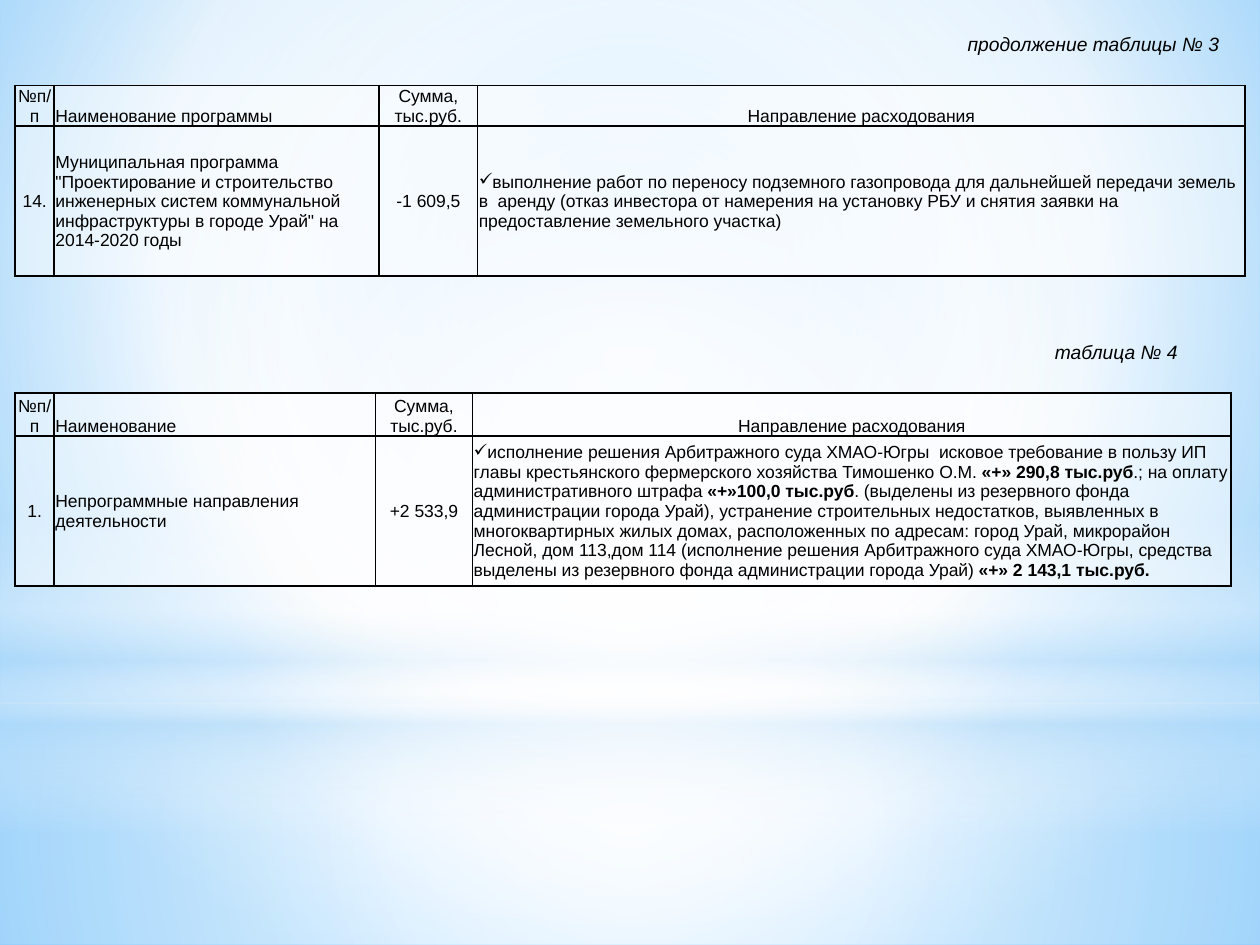
from lxml.etree import SubElement
from pptx import Presentation
from pptx.dml.color import RGBColor
from pptx.enum.shapes import MSO_SHAPE
from pptx.enum.text import MSO_ANCHOR, MSO_AUTO_SIZE, PP_ALIGN
from pptx.oxml import parse_xml
from pptx.oxml.ns import nsdecls, qn
from pptx.util import Inches, Pt

BACKGROUND = [(0, "9ED5FF", 100), (60, "FFFFFF", 100), (100, "5BB9FF", 100)]
CENTER = (50, 50, 50, 50)
GLOWS = [
    (MSO_SHAPE.RECTANGLE, 5.58, 1.92, CENTER,
     [(0, "FFFFFF", 91), (37, "FFFFFF", 76), (100, "B4DCFA", 79)]),
    (MSO_SHAPE.RECTANGLE, 0, 5.58, CENTER,
     [(0, "FFFFFF", 89), (48, "FFFFFF", 62), (100, "B4DCFA", 79)]),
    (MSO_SHAPE.RECTANGLE, 4.12, 2.5, None,
     [(0, "FFFFFF", 0), (29, "FFFFFF", 30), (45, "B4DCFA", 40),
      (55, "FFFFFF", 26), (65, "B4DCFA", 60), (100, "FFFFFF", 0)]),
    (MSO_SHAPE.OVAL, 1.75, 5.58, CENTER, [(0, "FFFFFF", 100), (56, "FFFFFF", 0)]),
]
CAPTIONS = [
    ("продолжение таблицы № 3 ", 7.56, 0.21, 2.26),
    ("таблица № 4 ", 8.26, 2.65, 1.23),
]
TABLES = [
    {
        "top": 0.68,
        "columns": [0.31, 2.58, 0.78, 6.09],
        "rows": [0.32, 1.19],
        "header": ["№п/п", "Наименование программы", "Сумма, тыс.руб.", "Направление расходования"],
        "body": [
            "14.",
            "Муниципальная программа \"Проектирование и строительство инженерных систем "
            "коммунальной инфраструктуры в городе Урай\" на 2014-2020 годы",
            "-1 609,5",
            "выполнение работ по переносу подземного газопровода для дальнейшей передачи земель "
            "в  аренду (отказ инвестора от намерения на установку РБУ и снятия заявки на "
            "предоставление земельного участка)",
        ],
    },
    {
        "top": 3.12,
        "columns": [0.31, 2.55, 0.77, 6.02],
        "rows": [0.34, 1.19],
        "header": ["№п/п", "Наименование", "Сумма, тыс.руб.", "Направление расходования"],
        "body": [
            "1.",
            "Непрограммные направления деятельности",
            "+2 533,9",
            "исполнение решения Арбитражного суда ХМАО-Югры  исковое требование в пользу ИП главы "
            "крестьянского фермерского хозяйства Тимошенко О.М. **«+» 290,8 тыс.руб**.; на оплату "
            "административного штрафа **«+»100,0 тыс.руб**. (выделены из резервного фонда "
            "администрации города Урай), устранение строительных недостатков, выявленных в "
            "многоквартирных жилых домах, расположенных по адресам: город Урай, микрорайон Лесной, "
            "дом 113,дом 114 (исполнение решения Арбитражного суда ХМАО-Югры, средства выделены из "
            "резервного фонда администрации города Урай) **«+» 2 143,1 тыс.руб.**",
        ],
    },
]


def color(code):
    """Turn a hex string into a colour."""
    return RGBColor.from_string(code)


def set_gradient(fill, owner, stops, focus):
    """Give the owner element a radial gradient, or a vertical one without a focus."""
    fill.gradient()
    old = next(owner.iter(qn("a:gradFill")))
    marks = "".join(
        f'<a:gs pos="{place * 1000}"><a:srgbClr val="{code}">'
        f'<a:alpha val="{alpha * 1000}"/></a:srgbClr></a:gs>'
        for place, code, alpha in stops)
    if focus:
        sides = " ".join(f'{side}="{value * 1000}"' for side, value in zip("ltrb", focus))
        course = f'<a:path path="circle"><a:fillToRect {sides}/></a:path>'
    else:
        course = '<a:lin ang="5400000" scaled="0"/>'
    old.getparent().replace(old, parse_xml(
        f'<a:gradFill {nsdecls("a")} rotWithShape="1"><a:gsLst>{marks}</a:gsLst>{course}</a:gradFill>'))


def style_font(para, size, italic=False):
    """Set the common typeface of a paragraph."""
    para.font.name, para.font.size, para.font.italic = "Arial", Pt(size), italic
    para.font.color.rgb = color("000000")


def style_cell(cell, anchor):
    """Set the fill, margins and borders of a cell."""
    cell.vertical_anchor = anchor
    cell.margin_left = cell.margin_right = cell.margin_top = Inches(0.01)
    cell.margin_bottom = 0
    cell.fill.solid()
    cell.fill.fore_color.rgb = color("FFFFFF")
    properties = cell._tc.get_or_add_tcPr()
    SubElement(next(properties.iter(qn("a:srgbClr"))), qn("a:alpha"), val="46000")
    for index, side in enumerate("LRTB"):
        properties.insert(index, parse_xml(
            f'<a:ln{side} {nsdecls("a")} w="12700"><a:solidFill><a:srgbClr val="000000"/>'
            f'</a:solidFill></a:ln{side}>'))


def add_budget_table(page, data):
    """Add one table with a header row and a programme row."""
    columns, rows = data["columns"], data["rows"]
    frame = page.shapes.add_table(
        len(rows), len(columns), Inches(0.12), Inches(data["top"]),
        Inches(sum(columns)), Inches(sum(rows)))
    table = frame.table
    table.first_row = table.horz_banding = False
    for column, width in zip(table.columns, columns):
        column.width = Inches(width)
    for row, height in zip(table.rows, rows):
        row.height = Inches(height)
    for r, texts in enumerate((data["header"], data["body"])):
        for c, text in enumerate(texts):
            cell = table.cell(r, c)
            style_cell(cell, MSO_ANCHOR.MIDDLE if r else MSO_ANCHOR.BOTTOM)
            para = cell.text_frame.paragraphs[0]
            style_font(para, 10)
            centered = c in (0, 2) or (r, c) == (0, 3)
            para.alignment = PP_ALIGN.CENTER if centered else PP_ALIGN.LEFT
            for index, part in enumerate(text.split("**")):
                if part:
                    span = para.add_run()
                    span.text = part
                    span.font.bold = index % 2 == 1
            if (r, c) == (1, 3):
                properties = para._p.get_or_add_pPr()
                properties.set("marL", "0")
                properties.set("indent", "0")
                properties.insert(0, parse_xml(f'<a:buChar {nsdecls("a")} char="✓"/>'))


def main():
    """Build the slide and save it."""
    deck = Presentation()
    deck.slide_width, deck.slide_height = Inches(10), Inches(7.5)
    page = deck.slides.add_slide(deck.slide_layouts[6])
    set_gradient(page.background.fill, page.element, BACKGROUND, (20, 10, 20, 60))
    for kind, top, height, focus, stops in GLOWS:
        glow = page.shapes.add_shape(kind, 0, Inches(top), deck.slide_width, Inches(height))
        glow.shadow.inherit = False
        glow.line.fill.background()
        set_gradient(glow.fill, glow.element, stops, focus)
    for data in TABLES:
        add_budget_table(page, data)
    for text, left, top, width in CAPTIONS:
        box = page.shapes.add_textbox(Inches(left), Inches(top), Inches(width), Inches(0.29))
        box.text_frame.word_wrap = False
        box.text_frame.auto_size = MSO_AUTO_SIZE.SHAPE_TO_FIT_TEXT
        para = box.text_frame.paragraphs[0]
        para.text = text
        para.alignment = PP_ALIGN.RIGHT
        style_font(para, 11, italic=True)
    deck.save("out.pptx")


if __name__ == "__main__":
    main()
